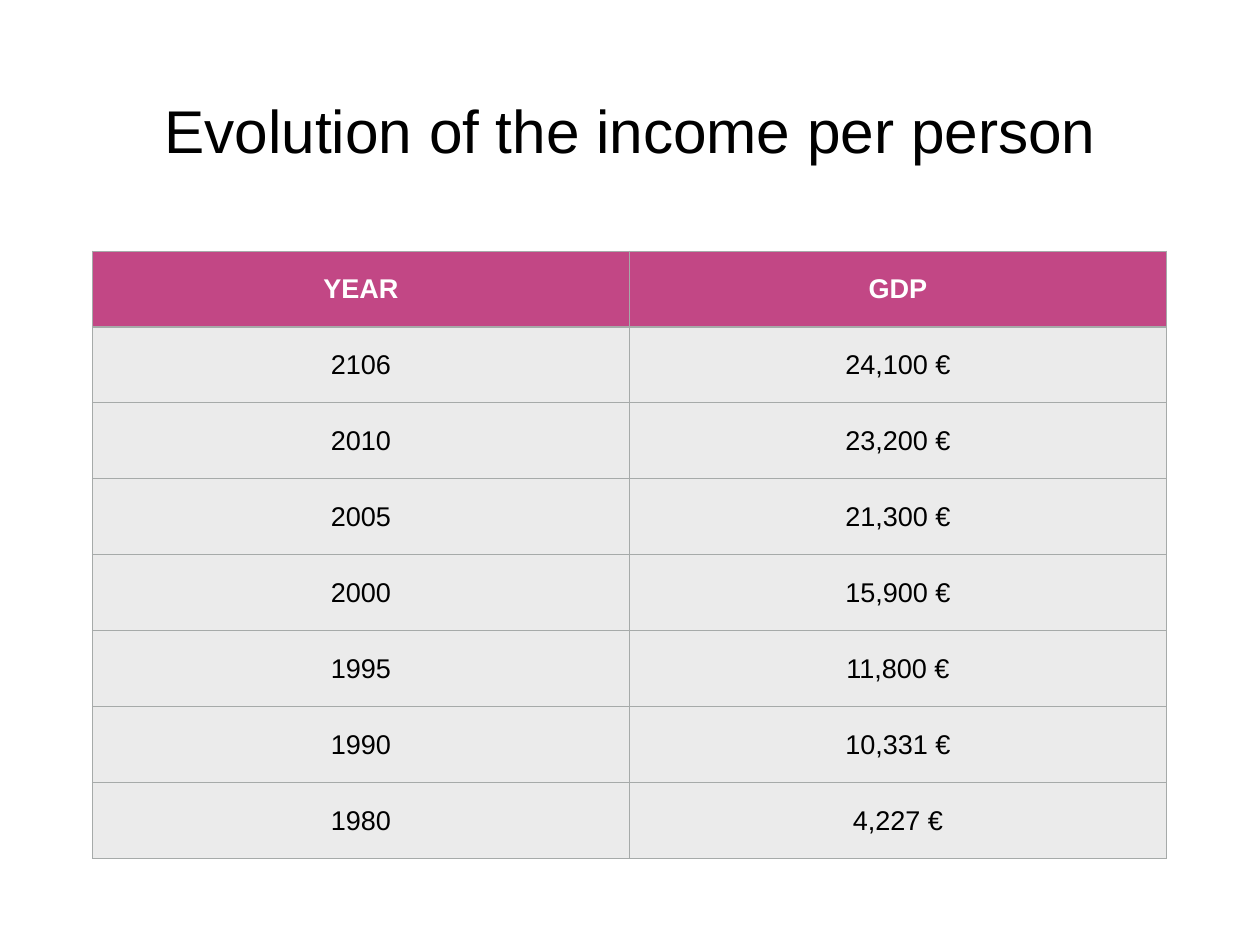
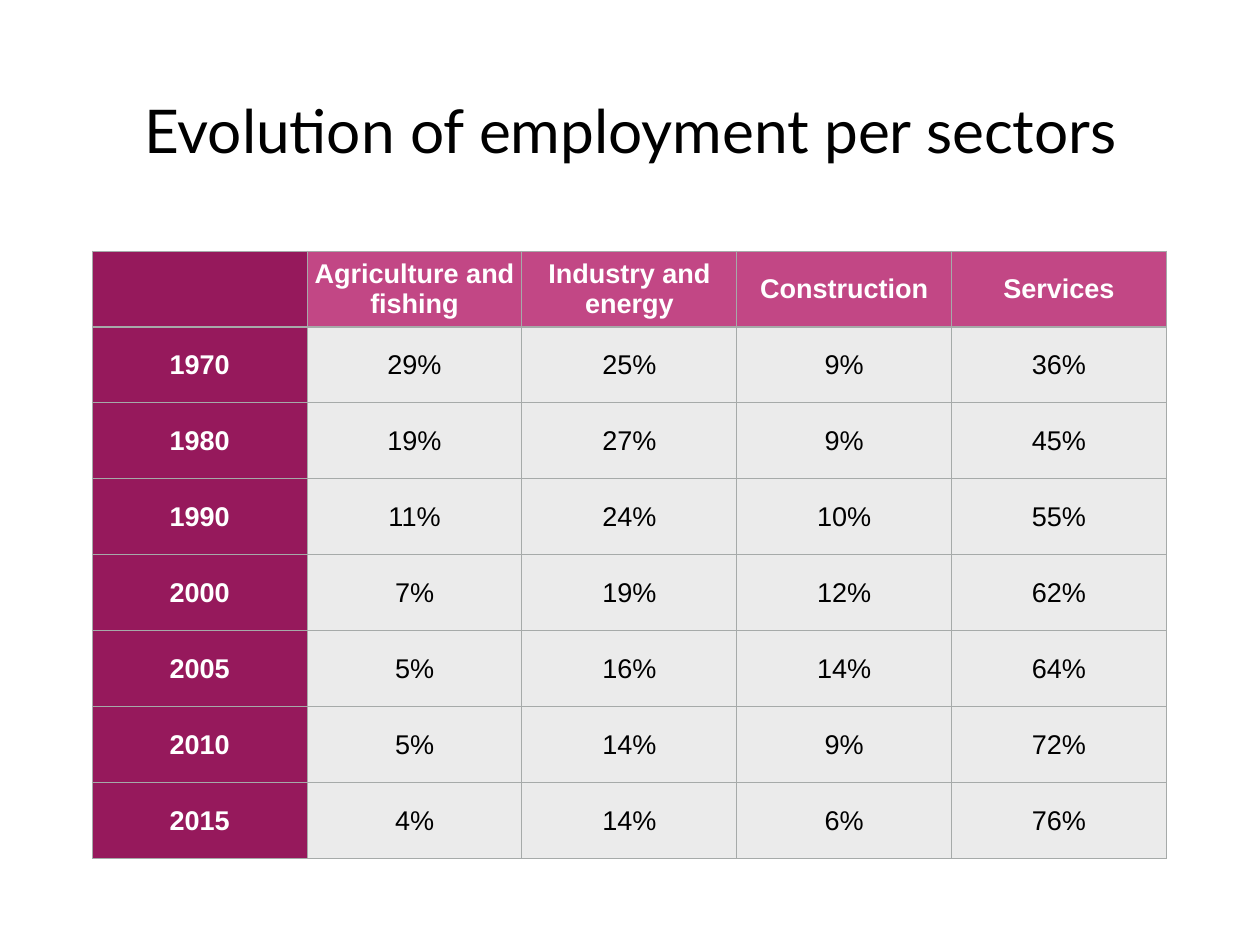
from lxml.etree import SubElement
from pptx import Presentation
from pptx.dml.color import RGBColor
from pptx.enum.text import MSO_ANCHOR, MSO_AUTO_SIZE, PP_ALIGN
from pptx.oxml.ns import qn
from pptx.util import Pt

COLOURS = {
    "text": "000000",
    "heading_text": "FFFFFF",
    "header": "C24785",
    "year_column": "96195C",
    "body": "EBEBEB",
    "grid": "A6AAA9",
}
SLIDE_SIZE = (1024, 768)
TITLE_BOX = (75, 20, 874, 170)
TABLE_BOX = (75, 204, 873, 494)
INSET = Pt(4)
MARGINS = {f"margin_{side}": INSET for side in ("left", "top", "right", "bottom")}
TITLE_FRAME = {
    **MARGINS,
    "word_wrap": True,
    "auto_size": MSO_AUTO_SIZE.NONE,
    "vertical_anchor": MSO_ANCHOR.MIDDLE,
}
CELL_FORMAT = {**MARGINS, "vertical_anchor": MSO_ANCHOR.MIDDLE}

INCOME = [
    ("YEAR", "GDP"),
    ("2106", "24,100 €"),
    ("2010", "23,200 €"),
    ("2005", "21,300 €"),
    ("2000", "15,900 €"),
    ("1995", "11,800 €"),
    ("1990", "10,331 €"),
    ("1980", "4,227 €"),
]
EMPLOYMENT = [
    ("", "Agriculture and fishing", "Industry and energy", "Construction", "Services"),
    ("1970", "29%", "25%", "9%", "36%"),
    ("1980", "19%", "27%", "9%", "45%"),
    ("1990", "11%", "24%", "10%", "55%"),
    ("2000", "7%", "19%", "12%", "62%"),
    ("2005", "5%", "16%", "14%", "64%"),
    ("2010", "5%", "14%", "9%", "72%"),
    ("2015", "4%", "14%", "6%", "76%"),
]


def apply(target, values):
    for attribute, value in values.items():
        setattr(target, attribute, value)


def colour(key):
    return RGBColor.from_string(COLOURS[key])


def style_paragraph(paragraph, colour_key, **font_format):
    paragraph.alignment = PP_ALIGN.CENTER
    apply(paragraph.font, font_format)
    paragraph.font.color.rgb = colour(colour_key)


def add_title(slide, box, wording, typeface):
    title = slide.shapes.title
    apply(title, dict(zip(("left", "top", "width", "height"), map(Pt, box))))
    apply(title.text_frame, TITLE_FRAME)
    title.text_frame.text = wording
    style_paragraph(title.text_frame.paragraphs[0], "text", size=Pt(49), name=typeface)


def outline_cell(cell):
    properties = cell._tc.get_or_add_tcPr()
    for edge in ("a:lnL", "a:lnR", "a:lnT", "a:lnB"):
        line = SubElement(properties, qn(edge), w=str(Pt(1)))
        fill = SubElement(line, qn("a:solidFill"))
        SubElement(fill, qn("a:srgbClr"), val=COLOURS["grid"])


def add_data_table(slide, box, records, year_headings):
    left, top, width, height = box
    row_count, column_count = len(records), len(records[0])
    table = slide.shapes.add_table(row_count, column_count, *map(Pt, box)).table
    apply(table, {"first_row": True, "first_col": year_headings, "horz_banding": False})

    # Equal columns and rows
    for column in table.columns:
        column.width = Pt(width / column_count)
    for row in table.rows:
        row.height = Pt(height / row_count)

    # Cells: year column, header row, then body
    for row_index, record in enumerate(records):
        for column_index, value in enumerate(record):
            if year_headings and column_index == 0:
                fill_key = "year_column"
            else:
                fill_key = "body" if row_index else "header"
            heading = fill_key != "body"
            cell = table.cell(row_index, column_index)
            cell.text = value
            apply(cell, CELL_FORMAT)
            outline_cell(cell)
            cell.fill.solid()
            cell.fill.fore_color.rgb = colour(fill_key)
            style_paragraph(
                cell.text_frame.paragraphs[0],
                "heading_text" if heading else "text",
                size=Pt(22), name="Arial", bold=heading,
            )


def add_table_slide(deck, wording, typeface, records, year_headings):
    slide = deck.slides.add_slide(deck.slide_layouts.get_by_name("Title Only"))
    add_title(slide, TITLE_BOX, wording, typeface)
    add_data_table(slide, TABLE_BOX, records, year_headings)


def main():
    deck = Presentation()
    deck.slide_width, deck.slide_height = map(Pt, SLIDE_SIZE)
    add_table_slide(deck, "Evolution of the income per person", "Arial", INCOME, False)
    add_table_slide(deck, "Evolution of employment per sectors", "Lato", EMPLOYMENT, True)
    deck.save("out.pptx")


if __name__ == "__main__":
    main()
